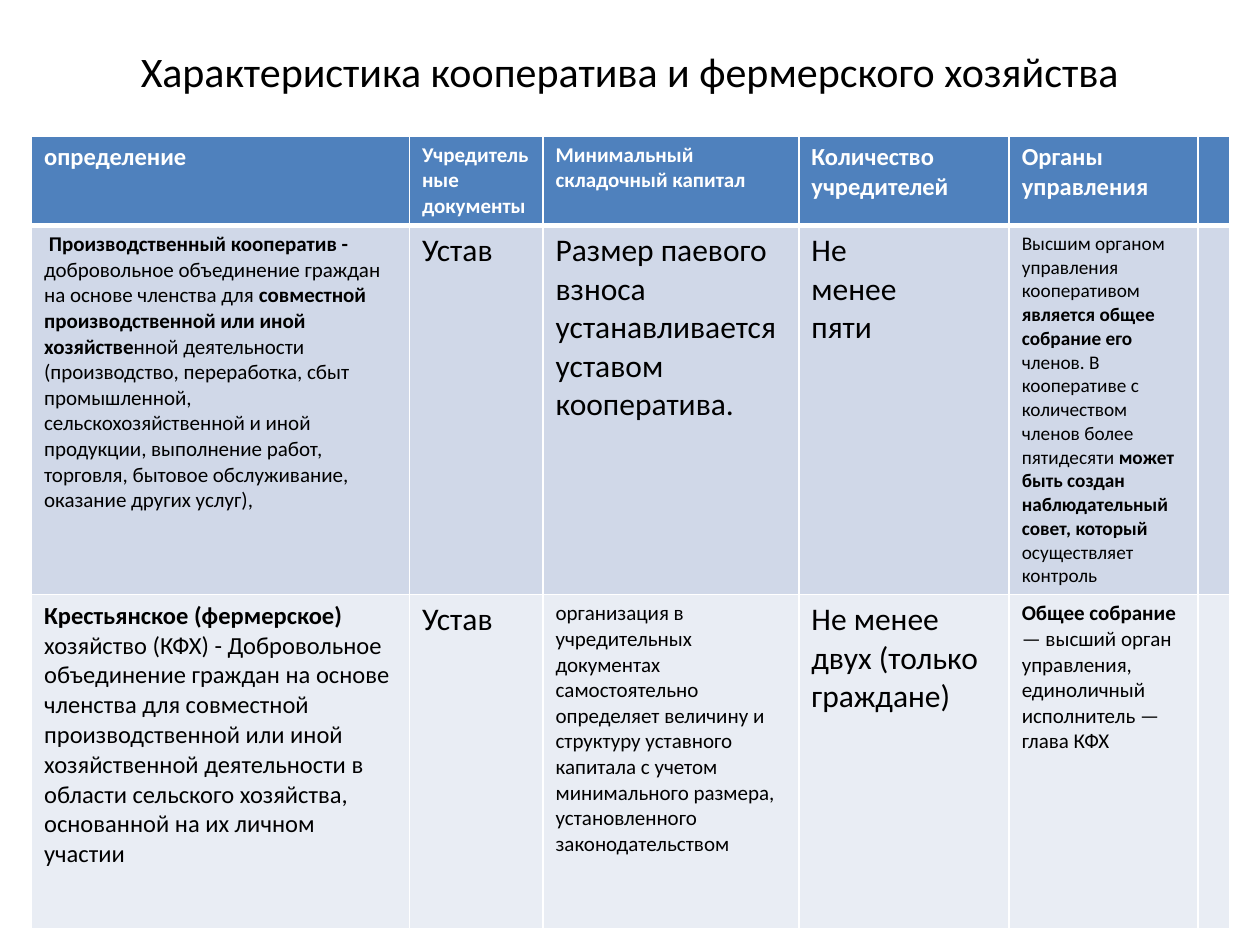
from dataclasses import dataclass

from lxml import etree
from pptx import Presentation
from pptx import util as u
from pptx.dml.color import RGBColor
from pptx.enum import text
from pptx.oxml import ns

WHITE = RGBColor(0xFF, 0xFF, 0xFF)
BLACK = RGBColor(0, 0, 0)
HEADER_BLUE = RGBColor(0x4F, 0x81, 0xBD)
BAND_DARK = RGBColor(0xD0, 0xD8, 0xE8)
BAND_LIGHT = RGBColor(0xE9, 0xED, 0xF4)
FONT = "Calibri"
WIDTH, HEIGHT = u.Inches(10), u.Inches(7.5)


@dataclass(frozen=True)
class Run:
    words: str
    bold: bool = False


@dataclass(frozen=True)
class Entry:
    size: int
    paragraphs: tuple[tuple[Run, ...], ...]


@dataclass(frozen=True)
class Band:
    height: float
    fill: RGBColor
    color: RGBColor
    bottom_line: float
    entries: tuple[Entry, ...]


def entry(size: int, *runs: Run) -> Entry:
    """A cell with a single paragraph."""
    return Entry(size, (runs,))


def heading(size: int, words: str) -> Entry:
    return entry(size, Run(words, True))


# Table content
COLUMNS = (3, 1.06, 2.03, 1.67, 1.5, 0.25)
CHARTER = entry(18, Run("Устав"))

HEADER = Band(0.66, HEADER_BLUE, WHITE, 3, (
    heading(14, "определение"),
    heading(12, "Учредительные документы"),
    heading(12, "Минимальный складочный капитал"),
    heading(14, "Количество учредителей"),
    heading(14, "Органы управления"),
))

COOPERATIVE = Band(2.85, BAND_DARK, BLACK, 1, (
    entry(12,
          Run(" "),
          Run("Производственный кооператив - ", True),
          Run("добровольное объединение граждан на основе членства для "),
          Run("совместной производственной или иной хозяйстве", True),
          Run("нной деятельности (производство, переработка, сбыт промышленной, "
              "сельскохозяйственной и иной продукции, выполнение работ, торговля, "
              "бытовое обслуживание, оказание других услуг),")),
    CHARTER,
    entry(18, Run("Размер паевого взноса устанавливается уставом кооператива.")),
    Entry(18, ((Run("Не"),), (Run("менее"),), (Run("пяти"),))),
    entry(11,
          Run("Высшим органом управления кооперативом "),
          Run("является общее собрание его ", True),
          Run("членов. В кооперативе с количеством членов более пятидесяти "),
          Run("может быть создан наблюдательный совет, который ", True),
          Run("осуществляет контроль")),
))

FARM = Band(2.65, BAND_LIGHT, BLACK, 1, (
    entry(14,
          Run("Крестьянское (фермерское) ", True),
          Run("хозяйство (КФХ) - Добровольное объединение граждан на основе членства "
              "для совместной производственной или иной хозяйственной деятельности "
              "в области сельского хозяйства, основанной на их личном участии")),
    CHARTER,
    entry(12, Run("организация в учредительных документах самостоятельно определяет "
                  "величину и структуру уставного капитала с учетом минимального "
                  "размера, установленного законодательством")),
    entry(18, Run("Не менее двух (только граждане)")),
    entry(12,
          Run("Общее собрание ", True),
          Run("— высший орган управления, единоличный исполнитель — глава КФХ")),
))

BANDS = (HEADER, COOPERATIVE, FARM)


def add_run(paragraph, run: Run, size: int, color: RGBColor) -> None:
    piece = paragraph.add_run()
    piece.text = run.words
    piece.font.name = FONT
    piece.font.size = u.Pt(size)
    piece.font.bold = run.bold
    piece.font.color.rgb = color


def draw_borders(cell, top: float, bottom: float) -> None:
    properties = cell._tc.get_or_add_tcPr()
    for side, points in (("L", 1), ("R", 1), ("T", top), ("B", bottom)):
        line = etree.SubElement(properties, ns.qn(f"a:ln{side}"), w=str(u.Pt(points)))
        fill = etree.SubElement(line, ns.qn("a:solidFill"))
        etree.SubElement(fill, ns.qn("a:srgbClr"), val=str(WHITE))


def fill_cell(cell, content: Entry, color: RGBColor) -> None:
    frame = cell.text_frame
    for index, runs in enumerate(content.paragraphs):
        paragraph = frame.add_paragraph() if index else frame.paragraphs[0]
        for run in runs:
            add_run(paragraph, run, content.size, color)


def add_title(slide) -> None:
    title = slide.shapes.title
    title.left, title.top = int(WIDTH * 0.05), int(HEIGHT * 0.04)
    title.width, title.height = int(WIDTH * 0.9), int(HEIGHT * 0.07)
    frame = title.text_frame
    frame.auto_size = text.MSO_AUTO_SIZE.NONE
    frame.vertical_anchor = text.MSO_ANCHOR.MIDDLE
    paragraph = frame.paragraphs[0]
    paragraph.alignment = text.PP_ALIGN.CENTER
    add_run(paragraph, Run("Характеристика кооператива и фермерского хозяйства"), 24, BLACK)


def add_comparison(slide) -> None:
    table = slide.shapes.add_table(
        len(BANDS), len(COLUMNS), u.Inches(0.25), u.Inches(1.08),
        u.Inches(sum(COLUMNS)), u.Inches(sum(band.height for band in BANDS))).table
    table.first_row = table.horz_banding = False
    for column, width in zip(table.columns, COLUMNS):
        column.width = u.Inches(width)

    line_above = 1
    for row, band in zip(table.rows, BANDS):
        row.height = u.Inches(band.height)
        for cell in row.cells:
            draw_borders(cell, line_above, band.bottom_line)
            cell.fill.solid()
            cell.fill.fore_color.rgb = band.fill
        for cell, content in zip(row.cells, band.entries):
            fill_cell(cell, content, band.color)
        line_above = band.bottom_line


def main() -> None:
    deck = Presentation()
    deck.slide_width, deck.slide_height = WIDTH, HEIGHT
    slide = deck.slides.add_slide(deck.slide_layouts[5])
    add_title(slide)
    add_comparison(slide)
    deck.save("out.pptx")


if __name__ == "__main__":
    main()
